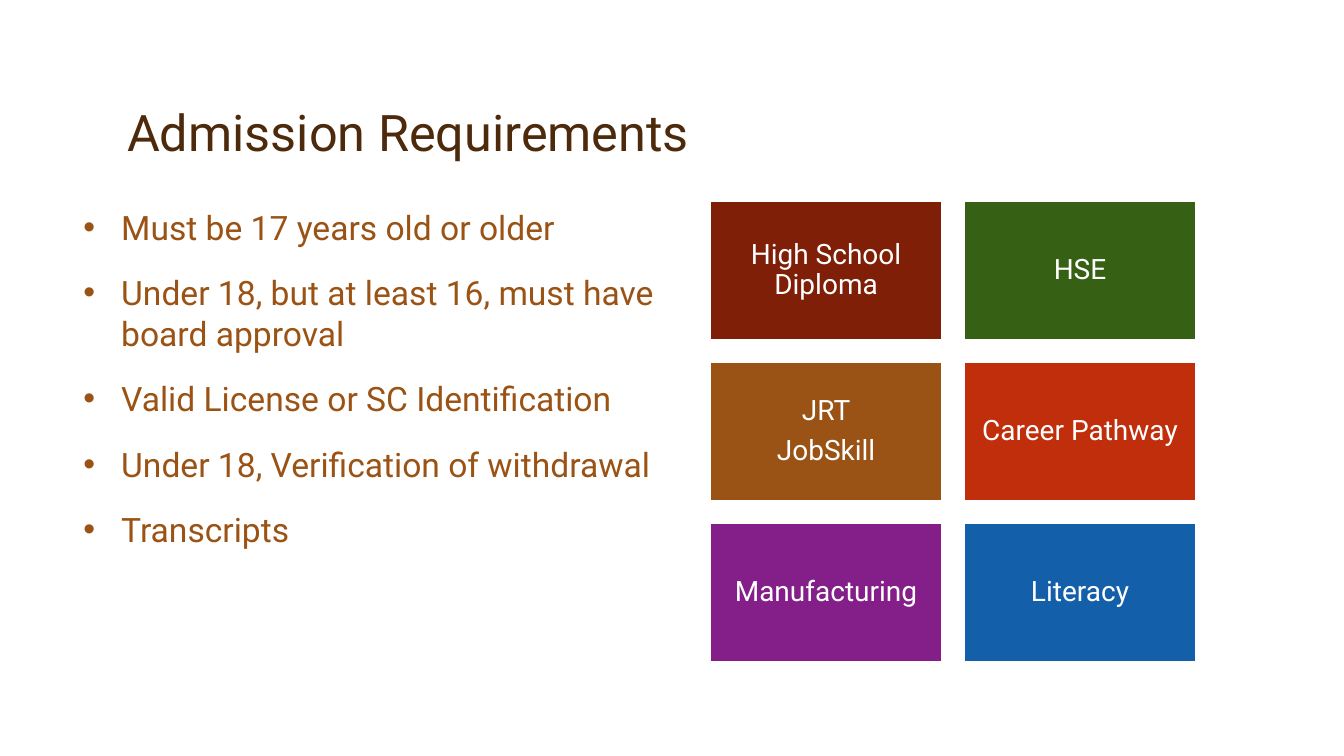
from pptx import Presentation
from pptx.dml.color import RGBColor
from pptx.enum.shapes import MSO_SHAPE
from pptx.enum.text import MSO_ANCHOR, MSO_AUTO_SIZE, PP_ALIGN
from pptx.util import Cm, Pt

WHITE = RGBColor(0xFF, 0xFF, 0xFF)
DARK_BROWN = RGBColor(0x4D, 0x2A, 0x0B)
BROWN = RGBColor(0x9A, 0x53, 0x15)
MAROON = RGBColor(0x80, 0x1F, 0x08)
GREEN = RGBColor(0x36, 0x60, 0x13)
RED = RGBColor(0xC0, 0x2E, 0x0C)
PURPLE = RGBColor(0x84, 0x1E, 0x89)
BLUE = RGBColor(0x14, 0x5F, 0xAA)


def apply_format(target, values):
    for name, value in values.items():
        setattr(target, name, value)


def write_paragraph(paragraph, text, size, color, layout):
    paragraph.text = text
    apply_format(paragraph, layout)
    apply_format(paragraph.font, {"name": "Roboto", "size": Pt(size)})
    paragraph.font.color.rgb = color


presentation = Presentation()
presentation.slide_width = Cm(33.87)
presentation.slide_height = Cm(19.05)
slide = presentation.slides.add_slide(presentation.slide_layouts[1])

heading = slide.shapes.title
apply_format(heading, {"left": Cm(2.95), "top": Cm(0.84), "width": Cm(27.94), "height": Cm(3.38)})
apply_format(heading.text_frame, {"vertical_anchor": MSO_ANCHOR.BOTTOM, "auto_size": MSO_AUTO_SIZE.NONE})
write_paragraph(heading.text_frame.paragraphs[0], "Admission Requirements", 36, DARK_BROWN,
                {"alignment": PP_ALIGN.LEFT, "line_spacing": 0.9})

requirements = slide.placeholders[1]
apply_format(requirements, {"left": Cm(1.85), "top": Cm(5.08), "width": Cm(15.37), "height": Cm(11.63)})
requirements.text_frame.auto_size = MSO_AUTO_SIZE.NONE
requirements.text_frame.text = "\n".join([
    "Must be 17 years old or older",
    "Under 18, but at least 16, must have board approval",
    "Valid License or SC Identification",
    "Under 18, Verification of withdrawal",
    "Transcripts",
])
for index, requirement in enumerate(requirements.text_frame.paragraphs):
    write_paragraph(requirement, requirement.text, 24, BROWN,
                    {"space_before": Pt(18 if index else 0), "line_spacing": 1.0})
    indents = requirement._p.get_or_add_pPr()
    indents.set("marL", str(Cm(0.95)))
    indents.set("indent", str(-Cm(0.95)))

pathways = [
    ("High School Diploma", MAROON),
    ("HSE", GREEN),
    ("JRT\nJobSkill", BROWN),
    ("Career Pathway", RED),
    ("Manufacturing", PURPLE),
    ("Literacy", BLUE),
]
for index, (label, color) in enumerate(pathways):
    row, column = divmod(index, 2)
    pathway = slide.shapes.add_shape(
        MSO_SHAPE.RECTANGLE, Cm(17.91 + 6.4 * column), Cm(5.08 + 4.06 * row), Cm(5.82), Cm(3.48))
    pathway.shadow.inherit = False
    pathway.fill.solid()
    pathway.fill.fore_color.rgb = color
    pathway.line.color.rgb = WHITE
    pathway.line.width = Pt(1)
    apply_format(pathway.text_frame, {
        "text": label, "word_wrap": True, "vertical_anchor": MSO_ANCHOR.MIDDLE,
        "margin_left": Cm(0.2), "margin_right": Cm(0.2),
        "margin_top": Cm(0.2), "margin_bottom": Cm(0.2)})
    for line in pathway.text_frame.paragraphs:
        write_paragraph(line, line.text, 20, WHITE,
                        {"alignment": PP_ALIGN.CENTER, "line_spacing": 0.9, "space_after": Pt(7)})

presentation.save("out.pptx")
